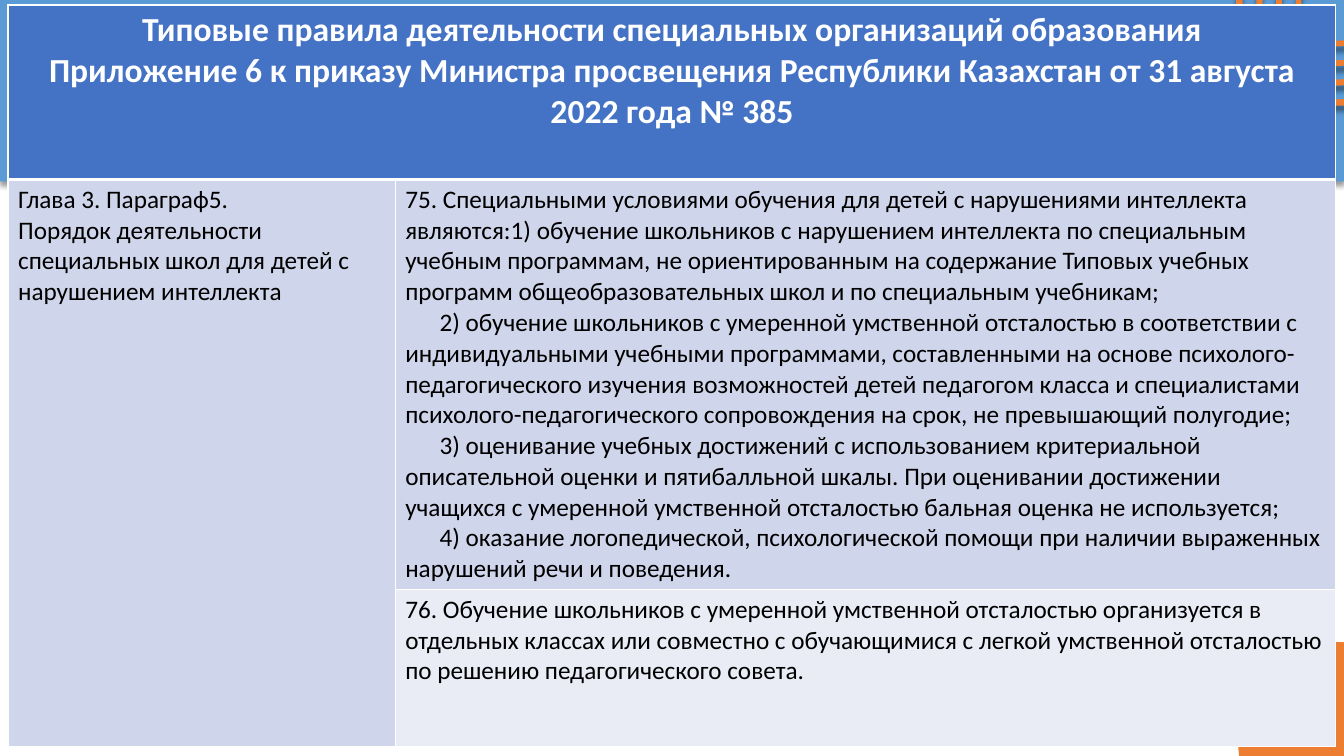
from dataclasses import dataclass

from lxml.etree import SubElement
from pptx import Presentation
from pptx.dml.color import RGBColor
from pptx.enum.shapes import MSO_SHAPE as SHAPE
from pptx.enum.text import PP_ALIGN as ALIGN
from pptx.oxml import parse_xml
from pptx.oxml.ns import nsdecls, qn
from pptx.util import Inches, Pt


@dataclass(frozen=True)
class Theme:
    font: str = "Calibri"
    title_size: int = 24
    body_size: int = 18
    white: str = "FFFFFF"
    black: str = "000000"
    banner: str = "5B9BD5"
    accent: str = "ED7D31"
    header: str = "4472C4"
    row_dark: str = "CFD5EA"
    row_light: str = "E9EBF5"


class SlideBuilder:
    def __init__(self, slide, theme):
        self.slide = slide
        self.theme = theme

    def shape(self, kind, x, y, w, h, color, line=None):
        sp = self.slide.shapes.add_shape(
            kind, Inches(x), Inches(y), Inches(w), Inches(h))
        sp.shadow.inherit = False
        sp.fill.solid()
        sp.fill.fore_color.rgb = RGBColor.from_string(color)
        if line:
            sp.line.color.rgb = RGBColor.from_string(color)
            sp.line.width = Pt(line)
        else:
            sp.line.fill.background()
        return sp

    def shadow(self, sp, opacity, blur, distance):
        effects = sp._element.spPr.find(qn("a:effectLst"))
        outer = SubElement(
            effects, qn("a:outerShdw"), blurRad=str(Pt(blur)),
            dist=str(Pt(distance)), dir="5400000", rotWithShape="0")
        color = SubElement(outer, qn("a:srgbClr"), val=self.theme.black)
        SubElement(color, qn("a:alpha"), val=str(opacity * 1000))

    def ring(self, cx, cy, diameter):
        sp = self.shape(SHAPE.DONUT, cx - diameter / 2, cy - diameter / 2,
                        diameter, diameter, self.theme.accent, line=3.5)
        sp.adjustments[0] = 0.008
        self.shadow(sp, 43, 4, 4)

    def table(self, x, y, widths, heights):
        frame = self.slide.shapes.add_table(
            len(heights), len(widths), Inches(x), Inches(y),
            Inches(sum(widths)), Inches(sum(heights)))
        table = frame.table
        for column, width in zip(table.columns, widths):
            column.width = Inches(width)
        for row, height in zip(table.rows, heights):
            row.height = Inches(height)
        return table

    def cell_style(self, cell, color, top=1, bottom=1):
        cell.fill.solid()
        cell.fill.fore_color.rgb = RGBColor.from_string(color)
        tc_pr = cell._tc.get_or_add_tcPr()
        sides = (("L", 1), ("R", 1), ("T", top), ("B", bottom))
        for i, (side, width) in enumerate(sides):
            tc_pr.insert(i, parse_xml(
                f'<a:ln{side} {nsdecls("a")} w="{Pt(width)}"><a:solidFill>'
                f'<a:srgbClr val="{self.theme.white}"/></a:solidFill></a:ln{side}>'))

    def cell_text(self, cell, paragraphs, size, color, bold=False,
                  align=ALIGN.LEFT, indent=0):
        tf = cell.text_frame
        for i, text in enumerate(paragraphs):
            p = tf.add_paragraph() if i else tf.paragraphs[0]
            p.text = text
            p.alignment = align
            if i and indent:
                p_pr = p._p.get_or_add_pPr()
                p_pr.set("marL", "0")
                p_pr.set("indent", str(Inches(indent)))
            p.font.name = self.theme.font
            p.font.size = Pt(size)
            p.font.bold = bold
            p.font.color.rgb = RGBColor.from_string(color)


TITLE = [
    "Типовые правила деятельности специальных организаций образования",
    "Приложение 6 к приказу Министра просвещения Республики Казахстан "
    "от 31 августа 2022 года № 385",
]
CHAPTER = [
    "Глава 3. Параграф5.",
    "Порядок деятельности специальных школ для детей с нарушением интеллекта",
]
CONDITIONS = [
    "75. Специальными условиями обучения для детей с нарушениями интеллекта "
    "являются:1) обучение школьников с нарушением интеллекта по специальным "
    "учебным программам, не ориентированным на содержание Типовых учебных "
    "программ общеобразовательных школ и по специальным учебникам;",
    "2) обучение школьников с умеренной умственной отсталостью в соответствии с "
    "индивидуальными учебными программами, составленными на основе "
    "психолого-педагогического изучения возможностей детей педагогом класса и "
    "специалистами психолого-педагогического сопровождения на срок, "
    "не превышающий полугодие;",
    "3) оценивание учебных достижений с использованием критериальной "
    "описательной оценки и пятибалльной шкалы. При оценивании достижении "
    "учащихся с умеренной умственной отсталостью бальная оценка не используется;",
    "4) оказание логопедической, психологической помощи при наличии выраженных "
    "нарушений речи и поведения.",
]
CLASSES = [
    "76. Обучение школьников с умеренной умственной отсталостью организуется в "
    "отдельных классах или совместно с обучающимися с легкой умственной "
    "отсталостью по решению педагогического совета.",
]


def main():
    prs = Presentation()
    prs.slide_width, prs.slide_height = Inches(13.33), Inches(7.5)
    theme = Theme()
    s = SlideBuilder(prs.slides.add_slide(prs.slide_layouts[6]), theme)

    # Banner and corner decorations
    banner = s.shape(SHAPE.RECTANGLE, 0, 0, 13.33, 1.8, theme.banner)
    s.shadow(banner, 40, 4, 3)
    s.shape(SHAPE.OVAL, 12.28, 6.37, 1.97, 1.97, theme.accent)
    for diameter in (1.97, 1.57, 1.18, 0.79):
        s.ring(13.27, 0.04, diameter)

    # Table grid
    table = s.table(0.08, 0.05, (3.84, 9.33), (1.73, 4.06, 1.56))
    title, chapter = table.cell(0, 0), table.cell(1, 0)
    for col in range(2):
        s.cell_style(table.cell(0, col), theme.header, bottom=3)
        s.cell_style(table.cell(1, col), theme.row_dark, top=3)
    s.cell_style(table.cell(2, 0), theme.row_dark)
    s.cell_style(table.cell(2, 1), theme.row_light)
    title.merge(table.cell(0, 1))
    chapter.merge(table.cell(2, 0))

    # Table text
    s.cell_text(title, TITLE, theme.title_size, theme.white,
                bold=True, align=ALIGN.CENTER)
    s.cell_text(chapter, CHAPTER, theme.body_size, theme.black)
    s.cell_text(table.cell(1, 1), CONDITIONS, theme.body_size, theme.black,
                indent=0.34)
    s.cell_text(table.cell(2, 1), CLASSES, theme.body_size, theme.black)

    prs.save("out.pptx")


if __name__ == "__main__":
    main()
